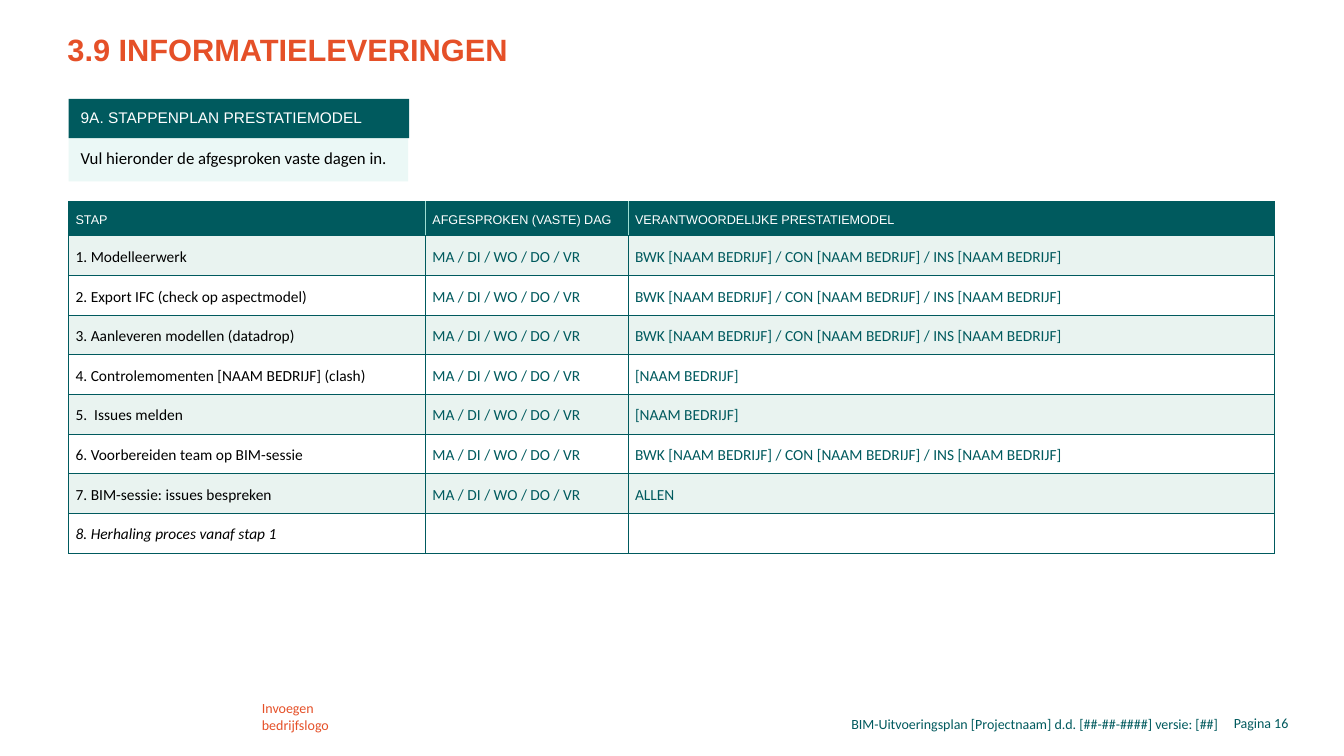
from lxml.etree import SubElement
from pptx import Presentation
from pptx.dml.color import RGBColor
from pptx.enum.shapes import MSO_SHAPE
from pptx.enum.text import MSO_ANCHOR, PP_ALIGN
from pptx.oxml.ns import qn
from pptx.util import Inches, Pt

TEAL = RGBColor(0x00, 0x5A, 0x5E)
MINT = RGBColor(0x9D, 0xDE, 0xD3)
PALE = RGBColor(0xEB, 0xF8, 0xF6)
BAND = RGBColor(0xE9, 0xF3, 0xF0)
ORANGE = RGBColor(0xE5, 0x50, 0x28)
WHITE = RGBColor(0xFF, 0xFF, 0xFF)
BLACK = RGBColor(0x00, 0x00, 0x00)

DAYS = "MA / DI / WO / DO / VR"
COMPANY = "[NAAM BEDRIJF]"
TEAM = f"BWK {COMPANY} / CON {COMPANY} / INS {COMPANY}"
HEADINGS = ("STAP", "AFGESPROKEN (VASTE) DAG", "VERANTWOORDELIJKE PRESTATIEMODEL")
STEPS = [
    ("1. Modelleerwerk", DAYS, TEAM),
    ("2. Export IFC (check op aspectmodel)", DAYS, TEAM),
    ("3. Aanleveren modellen (datadrop)", DAYS, TEAM),
    (f"4. Controlemomenten {COMPANY} (clash)", DAYS, COMPANY),
    ("5.  Issues melden", DAYS, COMPANY),
    ("6. Voorbereiden team op BIM-sessie", DAYS, TEAM),
    ("7. BIM-sessie: issues bespreken", DAYS, "ALLEN"),
    ("8. Herhaling proces vanaf stap 1", "", ""),
]


class Deck:
    """One slide on a grid of 80 columns by 45 rows."""
    HEAD, BODY = "Arial", "Calibri"

    def __init__(self):
        self.prs = Presentation()
        self.prs.slide_width, self.prs.slide_height = Inches(13.33), Inches(7.5)
        self.s = self.prs.slides.add_slide(self.prs.slide_layouts[6])

    def col(self, n):
        return round(self.prs.slide_width * n / 80)

    def row(self, n):
        return round(self.prs.slide_height * n / 45)

    def box(self, x, y, w, h):
        return self.col(x), self.row(y), self.col(w), self.row(h)

    def style_text(self, tf, text, size, color, font=BODY, bold=False, italic=False,
                   align=PP_ALIGN.LEFT, spacing=None):
        tf.text = text
        for p in tf.paragraphs:
            p.alignment = align
            p.line_spacing = spacing
            f = p.font
            f.name, f.size, f.bold, f.italic = font, Pt(size), bold, italic
            f.color.rgb = color

    def frame(self, sp, text, size, color, left=0.1, right=0.1, edge=0.05,
              anchor=MSO_ANCHOR.TOP, **style):
        tf = sp.text_frame
        tf.word_wrap = True
        tf.vertical_anchor = anchor
        tf.margin_left, tf.margin_right = Inches(left), Inches(right)
        tf.margin_top = tf.margin_bottom = Inches(edge)
        self.style_text(tf, text, size, color, **style)

    def text(self, grid, *args, **style):
        self.frame(self.s.shapes.add_textbox(*self.box(*grid)), *args, **style)

    def panel(self, grid, fill, *args, **style):
        sp = self.s.shapes.add_shape(MSO_SHAPE.RECTANGLE, *self.box(*grid))
        sp.shadow.inherit = False
        sp.fill.solid()
        sp.fill.fore_color.rgb = fill
        sp.line.fill.background()
        self.frame(sp, *args, **style)

    def borders(self, cell, left, right):
        tcPr = cell._tc.get_or_add_tcPr()
        sides = {"L": left, "R": right, "T": TEAL, "B": TEAL}
        for i, (side, color) in enumerate(sides.items()):
            ln = SubElement(tcPr, qn(f"a:ln{side}"), w=str(Pt(0.75)))
            fill = SubElement(ln, qn("a:solidFill"))
            SubElement(fill, qn("a:srgbClr"), val=str(color))
            tcPr.insert(i, ln)

    def cell(self, cell, text, fill, left=TEAL, right=TEAL, **style):
        cell.fill.solid()
        cell.fill.fore_color.rgb = fill
        cell.vertical_anchor = MSO_ANCHOR.MIDDLE
        cell.margin_left = cell.margin_right = Inches(0.07)
        cell.margin_top = cell.margin_bottom = 0
        self.style_text(cell.text_frame, text, spacing=1.15, **style)
        self.borders(cell, left, right)

    def table(self, x, y, widths, head_height, row_height, headings, rows):
        height = head_height + row_height * len(rows)
        grid = self.box(x, y, sum(widths), height)
        tbl = self.s.shapes.add_table(len(rows) + 1, len(widths), *grid).table
        tbl.first_row = tbl.horz_banding = False
        for column, width in zip(tbl.columns, widths):
            column.width = self.col(width)
        for i, row in enumerate(tbl.rows):
            row.height = self.row(row_height if i else head_height)
        last = len(headings) - 1
        for c, heading in enumerate(headings):
            self.cell(tbl.cell(0, c), heading, TEAL, size=9, color=WHITE, font=self.HEAD,
                      left=MINT if c else TEAL, right=MINT if c < last else TEAL)
        for r, values in enumerate(rows, 1):
            for c, value in enumerate(values):
                self.cell(tbl.cell(r, c), value, BAND if r % 2 else WHITE, size=11,
                          color=TEAL if c else BLACK, italic=r == len(rows))


def main():
    d = Deck()

    # Title
    d.text((4.02, 1.56, 34.86, 2.82), "3.9 INFORMATIELEVERINGEN", 22, ORANGE,
           left=0, font=d.HEAD, bold=True)

    # Instruction block
    d.panel((4.08, 8.1, 20.22, 2.7), PALE, "Vul hieronder de afgesproken vaste dagen in.",
            12, BLACK, left=0.12, right=0.12, edge=0.12)
    d.panel((4.08, 5.88, 20.28, 2.34), TEAL, "9A. STAPPENPLAN PRESTATIEMODEL", 11, WHITE,
            left=0.12, anchor=MSO_ANCHOR.MIDDLE, font=d.HEAD, spacing=0.9)

    # Steps
    d.table(4.08, 12, (21.24, 12.06, 38.46), 2.04, 2.36, HEADINGS, STEPS)

    # Footer
    d.text((15, 41.34, 6.84, 2.64), "Invoegen\nbedrijfslogo", 10, ORANGE)
    d.text((40.62, 42.3, 32.46, 1.62),
           "BIM-Uitvoeringsplan [Projectnaam] d.d. [##-##-####] versie: [##]",
           10, TEAL, align=PP_ALIGN.RIGHT)
    d.text((72.42, 42.24, 3.24, 1.62), "Pagina", 10, TEAL, left=0, right=0,
           align=PP_ALIGN.RIGHT)
    d.text((75.66, 42.18, 2.64, 1.68), " 16", 10, TEAL, left=0, right=0,
           anchor=MSO_ANCHOR.MIDDLE)

    d.prs.save("out.pptx")


if __name__ == "__main__":
    main()
